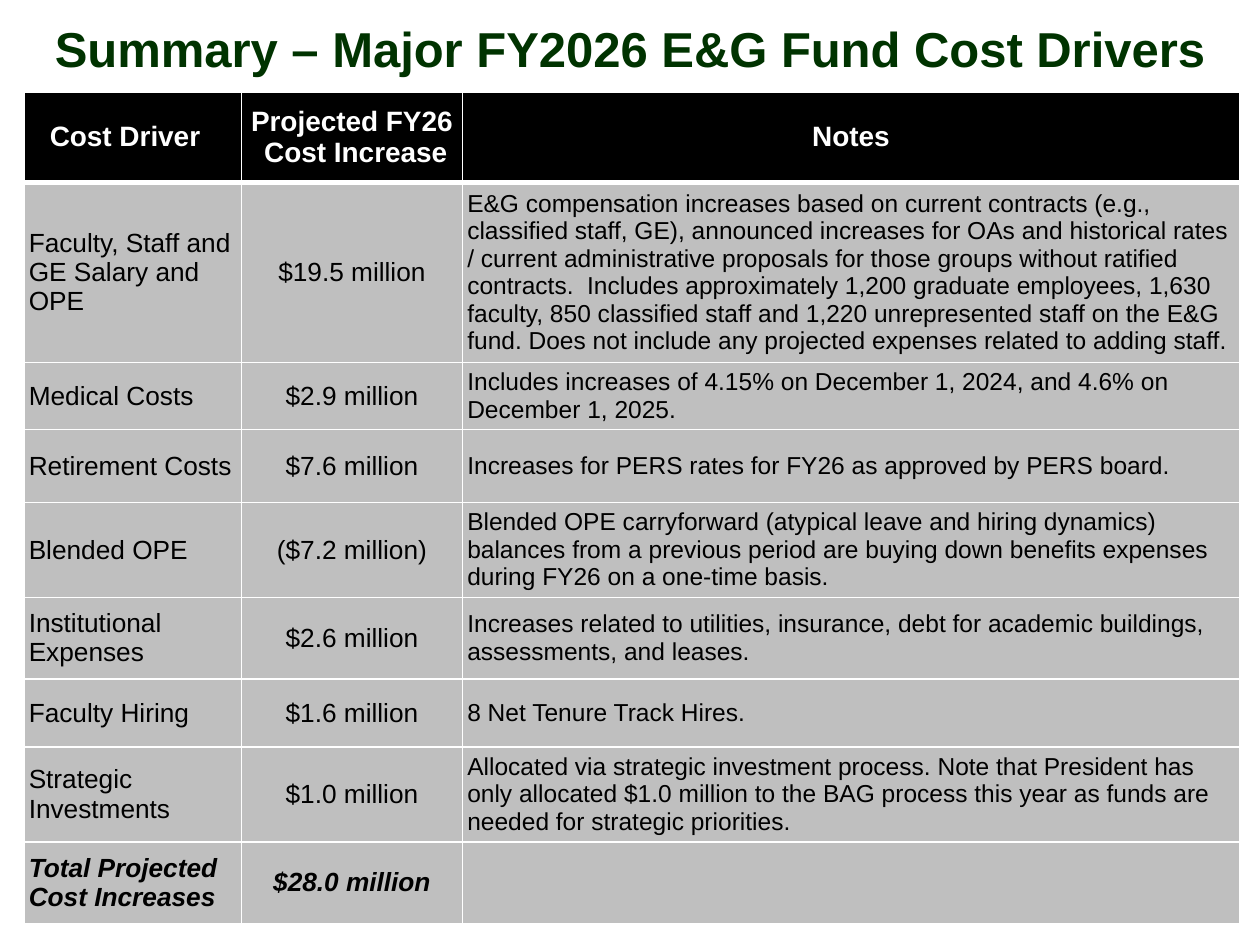
from dataclasses import dataclass

from lxml import etree
from pptx import Presentation
from pptx import util as u
from pptx.dml.color import RGBColor
from pptx.enum import text
from pptx.oxml.ns import qn


@dataclass(frozen=True)
class Theme:
    font: str = "Arial"
    title: str = "003300"
    head: str = "000000"
    body: str = "BFBFBF"
    ink: str = "000000"
    light: str = "FFFFFF"
    title_size: int = 28
    head_size: int = 16
    item_size: int = 15
    note_size: int = 14
    line: int = 1
    head_line: int = 3


THEME = Theme()
LEFT, MID = text.PP_ALIGN.LEFT, text.PP_ALIGN.CENTER

COLS = (4.39, 4.45, 15.67)
ROWS = (1.83, 3.63, 1.35, 1.47, 1.91, 1.65, 1.37, 1.91, 1.65)
HEADS = ("Cost Driver", "Projected FY26\n Cost Increase", "Notes")
COSTS = (
    ("Faculty, Staff and GE Salary and OPE", "$19.5 million",
     "E&G compensation increases based on current contracts (e.g., classified "
     "staff, GE), announced increases for OAs and historical rates / current "
     "administrative proposals for those groups without ratified contracts.  "
     "Includes approximately 1,200 graduate employees, 1,630 faculty, 850 "
     "classified staff and 1,220 unrepresented staff on the E&G fund. Does not "
     "include any projected expenses related to adding staff."),
    ("Medical Costs", "$2.9 million",
     "Includes increases of 4.15% on December 1, 2024, and 4.6% on "
     "December 1, 2025."),
    ("Retirement Costs", "$7.6 million",
     "Increases for PERS rates for FY26 as approved by PERS board."),
    ("Blended OPE", "($7.2 million)",
     "Blended OPE carryforward (atypical leave and hiring dynamics) balances "
     "from a previous period are buying down benefits expenses during FY26 on "
     "a one-time basis."),
    ("Institutional Expenses", "$2.6 million",
     "Increases related to utilities, insurance, debt for academic buildings, "
     "assessments, and leases."),
    ("Faculty Hiring", "$1.6 million", "8 Net Tenure Track Hires."),
    ("Strategic Investments", "$1.0 million",
     "Allocated via strategic investment process. Note that President has only "
     "allocated $1.0 million to the BAG process this year as funds are needed "
     "for strategic priorities."),
    ("Total Projected Cost Increases", "$28.0 million", ""),
)


def write(frame, words, size, color, align=MID, bold=False, slant=False):
    """Fill a text frame, one paragraph per line of words."""
    for i, line in enumerate(words.split("\n")):
        para = frame.add_paragraph() if i else frame.paragraphs[0]
        para.alignment = align
        if not line:
            para.font.size = u.Pt(size)
            continue
        run = para.add_run()
        run.text = line
        font = run.font
        font.name, font.size = THEME.font, u.Pt(size)
        font.bold, font.italic = bold, slant
        font.color.rgb = RGBColor.from_string(color)


def inset(box, side, top, right=None):
    """Set the inner margins in cm; right follows side unless given."""
    box.margin_left = u.Cm(side)
    box.margin_right = u.Cm(side if right is None else right)
    box.margin_top = box.margin_bottom = u.Cm(top)
    box.vertical_anchor = text.MSO_ANCHOR.MIDDLE


def paint(cell, color, top, base):
    """Fill a cell and rule its four edges; top and base are points."""
    cell.fill.solid()
    cell.fill.fore_color.rgb = RGBColor.from_string(color)
    props = cell._tc.get_or_add_tcPr()
    edges = {"L": THEME.line, "R": THEME.line, "T": top, "B": base}
    for i, (side, width) in enumerate(edges.items()):
        edge = etree.Element(qn(f"a:ln{side}"), w=str(u.Pt(width)))
        fill = etree.SubElement(edge, qn("a:solidFill"))
        etree.SubElement(fill, qn("a:srgbClr"), val=THEME.light)
        props.insert(i, edge)


def add_title(slide, words):
    box = slide.shapes.add_textbox(u.Cm(0.56), u.Cm(0.1), u.Cm(24.28), u.Cm(1.73))
    frame = box.text_frame
    frame.word_wrap = True
    inset(frame, 0.18, 0.1)
    write(frame, words, THEME.title_size, THEME.title, bold=True)


def add_head(table):
    for i, words in enumerate(HEADS):
        cell = table.cell(0, i)
        inset(cell, 0.15, 0.08, right=0.15 if i else 0.46)
        paint(cell, THEME.head, THEME.line, THEME.head_line)
        write(cell.text_frame, words, THEME.head_size, THEME.light, bold=True)


def add_costs(table):
    sizes = (THEME.item_size, THEME.item_size, THEME.note_size)
    aligns = (LEFT, MID, LEFT)
    for row, cost in enumerate(COSTS, 1):
        total = row == len(COSTS)
        top = THEME.head_line if row == 1 else THEME.line
        for col, words in enumerate(cost):
            cell = table.cell(row, col)
            inset(cell, 0.1, 0.1)
            paint(cell, THEME.body, top, THEME.line)
            write(cell.text_frame, words, sizes[col], THEME.ink, aligns[col],
                  bold=total, slant=total)


def add_grid(slide):
    table = slide.shapes.add_table(
        len(ROWS), len(COLS), u.Cm(0.48), u.Cm(1.85),
        u.Cm(sum(COLS)), u.Cm(sum(ROWS))).table
    table.first_row = table.horz_banding = False
    for col, width in zip(table.columns, COLS):
        col.width = u.Cm(width)
    for row, height in zip(table.rows, ROWS):
        row.height = u.Cm(height)
    add_head(table)
    add_costs(table)


def main():
    deck = Presentation()
    deck.slide_width, deck.slide_height = u.Cm(25.4), u.Cm(19.05)
    slide = deck.slides.add_slide(deck.slide_layouts[6])
    add_grid(slide)
    add_title(slide, "Summary – Major FY2026 E&G Fund Cost Drivers")
    deck.save("out.pptx")


if __name__ == "__main__":
    main()
